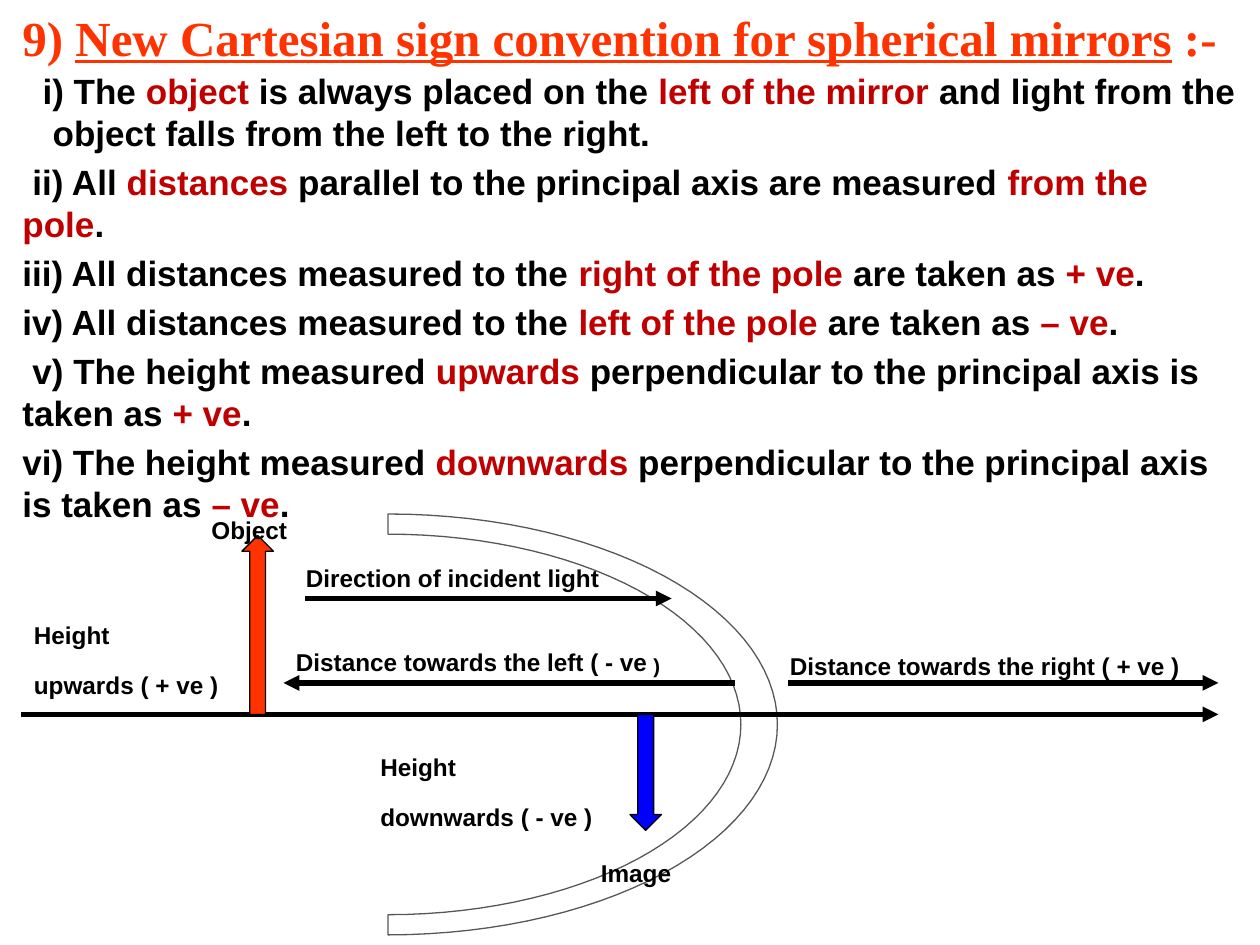
from dataclasses import dataclass
from math import cos, pi, sin

from lxml import etree
from pptx import Presentation
from pptx.dml.color import RGBColor
from pptx.enum.shapes import MSO_CONNECTOR, MSO_SHAPE
from pptx.enum.text import MSO_ANCHOR
from pptx.oxml.ns import qn
from pptx.util import Inches, Pt

LINE = MSO_CONNECTOR.STRAIGHT
UP = MSO_SHAPE.UP_ARROW
DOWN = MSO_SHAPE.DOWN_ARROW
MIDDLE = MSO_ANCHOR.MIDDLE
COLORS = {"black": "000000", "red": "C00000", "orange": "FF3300", "blue": "0000FF"}


@dataclass
class Run:
    text: str
    size: float = 24
    color: str = "black"
    font: str = "Arial"
    under: bool = False
    raised: bool = False


@dataclass
class Rule:
    texts: list[str]
    left: float = 0
    first: float = 0


@dataclass
class Label:
    box: tuple[float, float, float, float]
    lines: list[str]
    before: float = 0
    tail: str = ""
    small: float = 24


@dataclass
class Ray:
    start: float
    end: float
    y: float


@dataclass
class Arrow:
    kind: MSO_SHAPE
    box: tuple[float, float, float, float]
    color: str


RULES = [
    Rule(["i) The ", "object", " is always placed on the ", "left of the mirror",
          " and light from the object falls from the left to the right."], 0.24, -0.08),
    Rule(["ii) All ", "distances", " parallel to the principal axis are measured ",
          "from the pole", "."], 0, 0.08),
    Rule(["iii) All distances measured to the ", "right of the pole ",
          "are taken as ", "+ ve", "."]),
    Rule(["iv) All distances measured to the ", "left of the pole ",
          "are taken as ", "– ve", "."]),
    Rule(["v) The height measured ", "upwards",
          " perpendicular to the principal axis is taken as ", "+ ve", "."], 0, 0.08),
    Rule(["vi) The height measured ", "downwards",
          " perpendicular to the principal axis is taken as ", "– ve", "."]),
]
RAYS = [Ray(0.17, 9.67, 5.67), Ray(2.42, 5.33, 4.75),
        Ray(5.83, 2.25, 5.42), Ray(6.25, 9.67, 5.42)]
ARROWS = [Arrow(UP, (1.92, 4.25, 0.25, 1.42), "orange"),
          Arrow(DOWN, (5, 5.67, 0.25, 0.92), "blue")]
LABELS = [
    Label((2.33, 4.38, 3, 0.37), ["Direction of incident light"]),
    Label((2.25, 5.05, 3.58, 0.37), ["Distance towards the left ( - ve"], 0, " )", 20),
    Label((6.17, 5.08, 3.83, 0.37), ["Distance towards the right ( + ve"], 4.8, " )"),
    Label((2.92, 5.88, 2.17, 0.64), ["Height", "downwards ( - ve )"]),
    Label((0.17, 4.83, 1.89, 0.64), ["Height", "upwards ( + ve )"]),
    Label((1.58, 4, 1, 0.37), ["Object"]),
    Label((4.67, 6.72, 1.08, 0.37), ["Image"]),
]


def tint(name: str) -> RGBColor:
    return RGBColor.from_string(COLORS[name])


def add_run(para, item: Run) -> None:
    run = para.add_run()
    run.text = item.text
    font = run.font
    font.name, font.size, font.bold = item.font, Pt(item.size), True
    font.color.rgb = tint(item.color)
    if item.under:
        font.underline = True
    if item.raised:
        font._element.set("baseline", "30000")


def add_box(slide, box: tuple[float, float, float, float]):
    frame = slide.shapes.add_textbox(*map(Inches, box)).text_frame
    frame.word_wrap = True
    return frame


def next_para(frame, index: int):
    return frame.add_paragraph() if index else frame.paragraphs[0]


def add_title(slide) -> None:
    frame = add_box(slide, (0.08, 0.08, 9.92, 0.42))
    frame.vertical_anchor = MIDDLE
    name = "New Cartesian sign convention for spherical mirrors"
    for text in ("9) ", name, " :-"):
        add_run(frame.paragraphs[0],
                Run(text, 28, "orange", "Times New Roman", text == name))


def add_rules(slide, rules: list[Rule]) -> None:
    frame = add_box(slide, (0.08, 0.5, 9.83, 3.25))
    for index, rule in enumerate(rules):
        para = next_para(frame, index)
        para.space_before = Pt(4)
        para.line_spacing = Pt(24)
        props = para._p.get_or_add_pPr()
        props.set("marL", str(Inches(rule.left)))
        props.set("indent", str(Inches(rule.first)))
        for spot, text in enumerate(rule.texts):
            add_run(para, Run(text, 20, "red" if spot % 2 else "black"))


def add_label(slide, label: Label) -> None:
    frame = add_box(slide, label.box)
    for index, text in enumerate(label.lines):
        para = next_para(frame, index)
        para.space_before = Pt(label.before)
        add_run(para, Run(text, raised=True))
    if label.tail:
        add_run(para, Run(label.tail, label.small, raised=True))


def add_ray(slide, ray: Ray) -> None:
    line = slide.shapes.add_connector(
        LINE, *map(Inches, (ray.start, ray.y, ray.end, ray.y)))
    line.line.color.rgb = tint("black")
    line.line.width = Pt(3)
    etree.SubElement(line.line._get_or_add_ln(), qn("a:tailEnd"), type="triangle")
    etree.SubElement(line._element.spPr, qn("a:effectLst"))


def add_arrow(slide, arrow: Arrow) -> None:
    shape = slide.shapes.add_shape(arrow.kind, *map(Inches, arrow.box))
    shape.shadow.inherit = False
    shape.fill.solid()
    shape.fill.fore_color.rgb = tint(arrow.color)
    shape.line.color.rgb = tint("black")
    shape.line.width = Pt(0.75)


def arc(wide: float, high: float, steps: int = 60) -> list[tuple[int, int]]:
    turns = [pi * step / steps - pi / 2 for step in range(steps + 1)]
    return [(Inches(3.08 + wide * cos(turn)), Inches(5.75 + high * sin(turn)))
            for turn in turns]


def add_mirror(slide) -> None:
    points = arc(2.8, 1.51) + arc(3.09, 1.67)[::-1]
    curve = slide.shapes.build_freeform(*points[0])
    curve.add_line_segments(points[1:], close=True)
    shape = curve.convert_to_shape()
    shape.shadow.inherit = False
    shape.fill.background()
    shape.line.color.rgb = tint("black")
    shape.line.width = Pt(0.75)
    color = shape.line._get_or_add_ln().find(".//" + qn("a:srgbClr"))
    etree.SubElement(color, qn("a:alpha"), val="65000")


def main() -> None:
    deck = Presentation()
    deck.slide_width, deck.slide_height = Inches(10), Inches(7.5)
    slide = deck.slides.add_slide(deck.slide_layouts[6])
    add_title(slide)
    add_rules(slide, RULES)
    for ray in RAYS:
        add_ray(slide, ray)
    for arrow in ARROWS:
        add_arrow(slide, arrow)
    for label in LABELS:
        add_label(slide, label)
    add_mirror(slide)
    deck.save("out.pptx")


if __name__ == "__main__":
    main()
